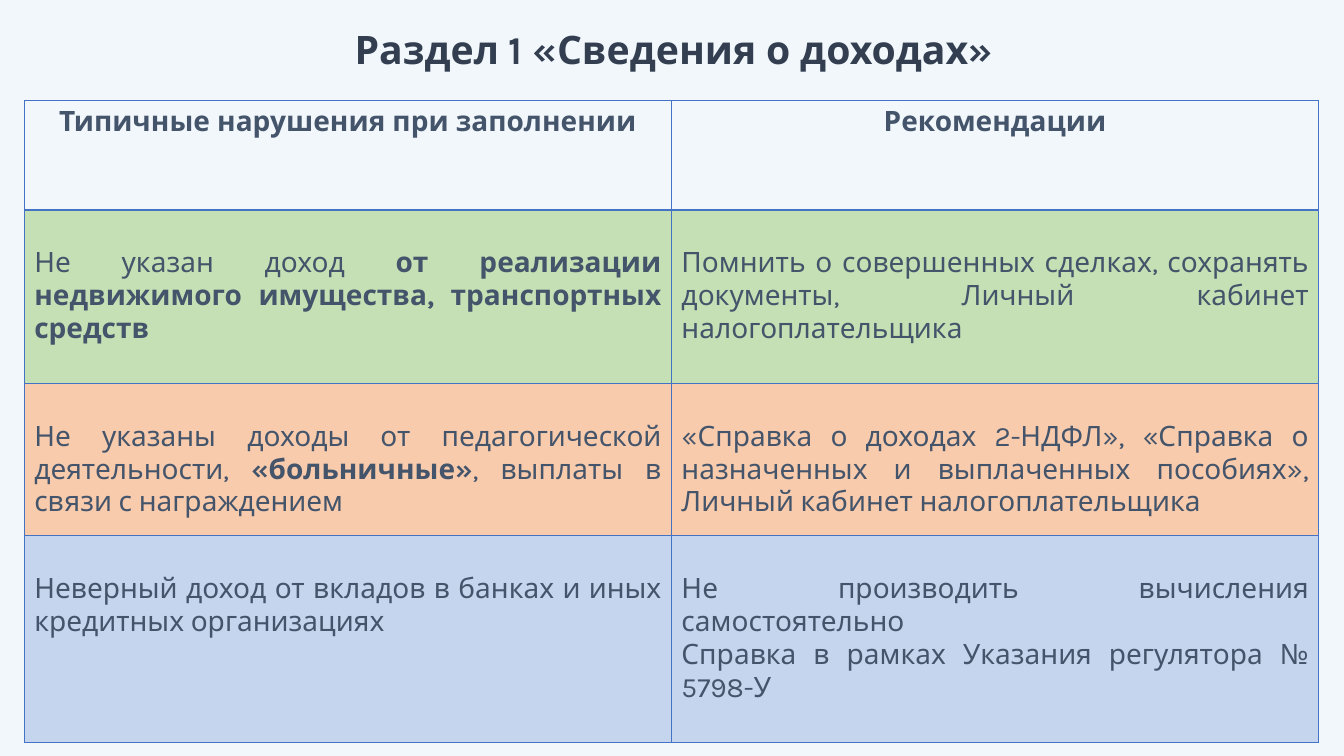
from dataclasses import dataclass
from typing import Optional

from lxml.etree import SubElement
from pptx import Presentation
from pptx.dml.color import RGBColor as Color
from pptx.enum.text import MSO_ANCHOR as Anchor, PP_ALIGN as Align
from pptx.oxml.ns import qn
from pptx.util import Cm, Pt


@dataclass(frozen=True)
class Theme:
    font: str = "Karla"
    page: str = "F2F7FC"
    title: str = "333F50"
    text: str = "44546A"
    border: str = "4472C4"
    green: str = "C5E0B4"
    orange: str = "F8CBAD"
    blue: str = "C6D5EE"
    title_size: int = 28
    text_size: int = 20
    thin: int = 1
    thick: int = 2


@dataclass(frozen=True)
class Span:
    text: str
    bold: bool = False


Paragraphs = tuple[tuple[Span, ...], ...]


@dataclass(frozen=True)
class Row:
    height: float
    cells: tuple[Paragraphs, Paragraphs]
    fill: Optional[str] = None
    align: Align = Align.JUSTIFY
    margin_top: float = 0.94
    top_line: int = Theme.thin
    bottom_line: int = Theme.thin


THEME = Theme()
ROWS = (
    Row(2.75, (
        ((Span("Типичные нарушения при заполнении", True),),),
        ((Span("Рекомендации", True),),),
    ), align=Align.CENTER, margin_top=0.13, bottom_line=THEME.thick),
    Row(4.37, (
        ((Span("Не указан доход "),
          Span("от реализации недвижимого имущества, транспортных средств", True)),),
        ((Span("Помнить о совершенных сделках, сохранять документы, "
               "Личный кабинет налогоплательщика"),),),
    ), THEME.green, top_line=THEME.thick),
    Row(3.84, (
        ((Span("Не указаны доходы от педагогической деятельности, "),
          Span("«больничные»", True),
          Span(", выплаты в связи с награждением")),),
        ((Span("«Справка о доходах 2-НДФЛ», «Справка о назначенных и выплаченных "
               "пособиях», Личный кабинет налогоплательщика"),),),
    ), THEME.orange),
    Row(5.21, (
        ((Span("Неверный доход от вкладов в банках и иных кредитных организациях"),),),
        ((Span("Не производить вычисления самостоятельно"),),
         (Span("Справка в рамках Указания регулятора № 5798-У"),)),
    ), THEME.blue),
)


def style_font(font, size: int, color: str, bold: bool) -> None:
    font.name = THEME.font
    font.size = Pt(size)
    font.bold = bold
    font.color.rgb = Color.from_string(color)


def draw_title(page, text: str) -> None:
    title = page.shapes.title
    title.left, title.top, title.width, title.height = Cm(7.49), Cm(0.51), Cm(17.78), Cm(1.45)
    title.text_frame.text = text
    title.text_frame.vertical_anchor = Anchor.MIDDLE
    para = title.text_frame.paragraphs[0]
    para.alignment = Align.RIGHT
    style_font(para.runs[0].font, THEME.title_size, THEME.title, True)


def draw_borders(cell, row: Row) -> None:
    properties = cell._tc.get_or_add_tcPr()
    widths = {"a:lnL": THEME.thin, "a:lnR": THEME.thin,
              "a:lnT": row.top_line, "a:lnB": row.bottom_line}
    for side, width in widths.items():
        line = SubElement(properties, qn(side), w=str(Pt(width)))
        SubElement(SubElement(line, qn("a:solidFill")), qn("a:srgbClr"), val=THEME.border)


def fill_cell(cell, row: Row, paragraphs: Paragraphs) -> None:
    draw_borders(cell, row)
    if row.fill:
        cell.fill.solid()
        cell.fill.fore_color.rgb = Color.from_string(row.fill)
    else:
        cell.fill.background()
    cell.margin_top = Cm(row.margin_top)
    frame = cell.text_frame
    for index, spans in enumerate(paragraphs):
        para = frame.add_paragraph() if index else frame.paragraphs[0]
        para.alignment = row.align
        for span in spans:
            run = para.add_run()
            run.text = span.text
            style_font(run.font, THEME.text_size, THEME.text, span.bold)


def draw_table(page, rows: tuple[Row, ...]) -> None:
    height = sum(row.height for row in rows)
    table = page.shapes.add_table(
        len(rows), 2, Cm(0.61), Cm(2.54), Cm(32.62), Cm(height)).table
    table.first_row = False
    table.horz_banding = False
    for row_index, row in enumerate(rows):
        table.rows[row_index].height = Cm(row.height)
        for column_index, paragraphs in enumerate(row.cells):
            fill_cell(table.cell(row_index, column_index), row, paragraphs)


def main() -> None:
    deck = Presentation()
    deck.slide_width, deck.slide_height = Cm(33.87), Cm(19.05)
    page = deck.slides.add_slide(deck.slide_layouts[5])
    page.background.fill.solid()
    page.background.fill.fore_color.rgb = Color.from_string(THEME.page)
    draw_table(page, ROWS)
    draw_title(page, "Раздел 1 «Сведения о доходах»")
    deck.save("out.pptx")


if __name__ == "__main__":
    main()
